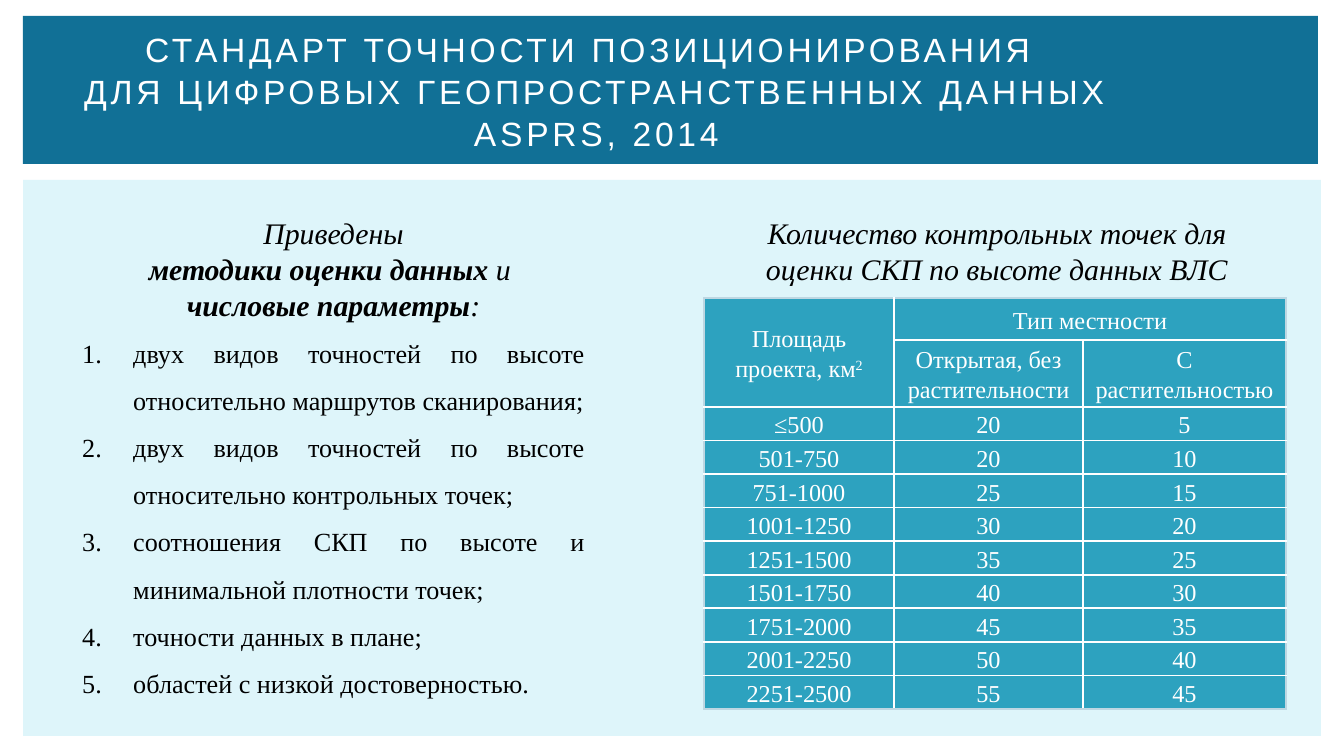
"""Build the slide on the ASPRS positional accuracy standard."""
import pptx
import pptx.dml.color
import pptx.enum.shapes
import pptx.enum.text
import pptx.oxml
import pptx.oxml.ns
import pptx.util

PX = 914400 / 134.4
ALIGN = pptx.enum.text.PP_ALIGN
ANCHOR = pptx.enum.text.MSO_ANCHOR
SERIF = "Times New Roman"
WHITE, BLACK, EDGE, CELL = "FFFFFF", "000000", "BED7E2", "2DA2BF"

PANELS = [((23, 180, 1298, 556), "DEF5FA"), ((23, 16, 1295, 148), "117096")]
TITLE = [
    "СТАНДАРТ ТОЧНОСТИ ПОЗИЦИОНИРОВАНИЯ ",
    "ДЛЯ ЦИФРОВЫХ ГЕОПРОСТРАНСТВЕННЫХ ДАННЫХ ASPRS, 2014",
]
TABLE_CAPTION = "Количество контрольных точек для оценки СКП по высоте данных ВЛС"
INTRO = [
    [("Приведены", False)],
    [("методики оценки данных ", True), ("и ", False)],
    [("числовые параметры", True), (":", False)],
]
METHODS = [
    "двух видов точностей по высоте относительно маршрутов сканирования;",
    "двух видов точностей по высоте относительно контрольных точек;",
    "соотношения СКП по высоте и минимальной плотности точек;",
    "точности данных в плане;",
    "областей с низкой достоверностью.",
]
POINT_COUNTS = [
    ("Площадь проекта, км", "Тип местности", ""),
    ("", "Открытая, без растительности", "С растительностью"),
    ("≤500", "20", "5"),
    ("501-750", "20", "10"),
    ("751-1000", "25", "15"),
    ("1001-1250", "30", "20"),
    ("1251-1500", "35", "25"),
    ("1501-1750", "40", "30"),
    ("1751-2000", "45", "35"),
    ("2001-2250", "50", "40"),
    ("2251-2500", "55", "45"),
]
COLUMN_WIDTHS = [190, 189, 203]
ROW_HEIGHTS = [42, 31] + [32] * (len(POINT_COUNTS) - 2)


def px(length):
    return pptx.util.Emu(round(length * PX))


def color(value):
    return pptx.dml.color.RGBColor.from_string(value)


def add_run(paragraph, text, size, ink=BLACK, face=SERIF, bold=False, italic=False):
    run = paragraph.add_run()
    run.text = text
    run.font.size = pptx.util.Pt(size)
    run.font.name = face
    run.font.bold = bold
    run.font.italic = italic
    run.font.color.rgb = color(ink)
    return run


def add_text_frame(slide, box):
    frame = slide.shapes.add_textbox(*map(px, box)).text_frame
    frame.word_wrap = True
    return frame


def next_paragraph(frame, align):
    first = frame.paragraphs[0]
    paragraph = frame.add_paragraph() if first.runs else first
    paragraph.alignment = align
    return paragraph


def set_number(paragraph):
    properties = paragraph._p.get_or_add_pPr()
    properties.set("marL", str(px(51)))
    properties.set("indent", str(px(-51)))
    properties.append(pptx.oxml.parse_xml(
        f'<a:buFont {pptx.oxml.ns.nsdecls("a")} typeface="+mj-lt"/>'))
    properties.append(pptx.oxml.parse_xml(
        f'<a:buAutoNum {pptx.oxml.ns.nsdecls("a")} type="arabicPeriod"/>'))


def set_borders(cell, outer_sides):
    properties = cell._tc.get_or_add_tcPr()
    for side in "LRTB":
        ink, width = (EDGE, 10000) if side in outer_sides else (WHITE, 12700)
        properties.append(pptx.oxml.parse_xml(
            f'<a:ln{side} {pptx.oxml.ns.nsdecls("a")} w="{width}"><a:solidFill>'
            f'<a:srgbClr val="{ink}"/></a:solidFill></a:ln{side}>'))


def add_panels(slide):
    for box, fill in PANELS:
        panel = slide.shapes.add_shape(
            pptx.enum.shapes.MSO_SHAPE.RECTANGLE, *map(px, box))
        panel.shadow.inherit = False
        panel.fill.solid()
        panel.fill.fore_color.rgb = color(fill)
        panel.line.fill.background()


def add_title(slide):
    frame = add_text_frame(slide, (20, 32, 1153, 116))
    frame.vertical_anchor = ANCHOR.MIDDLE
    paragraph = next_paragraph(frame, ALIGN.CENTER)
    paragraph.line_spacing = 1.05
    for index, line in enumerate(TITLE):
        if index:
            paragraph.add_line_break()
        run = add_run(paragraph, line, 18, WHITE, "Arial")
        run._r.get_or_add_rPr().set("spc", "200")


def add_point_table(slide):
    rows, columns = len(POINT_COUNTS), len(COLUMN_WIDTHS)
    table = slide.shapes.add_table(
        rows, columns, px(704), px(298),
        px(sum(COLUMN_WIDTHS)), px(sum(ROW_HEIGHTS))).table
    for column, width in zip(table.columns, COLUMN_WIDTHS):
        column.width = px(width)
    for row, height in zip(table.rows, ROW_HEIGHTS):
        row.height = px(height)
    table.cell(0, 0).merge(table.cell(1, 0))
    table.cell(0, 1).merge(table.cell(0, 2))
    for r, values in enumerate(POINT_COUNTS):
        for c, value in enumerate(values):
            cell = table.cell(r, c)
            edges = {"L": c == 0, "R": c == columns - 1 or (r, c) == (0, 1),
                     "T": r == 0, "B": r == rows - 1}
            set_borders(cell, [side for side in edges if edges[side]])
            cell.fill.solid()
            cell.fill.fore_color.rgb = color(CELL)
            cell.vertical_anchor = ANCHOR.MIDDLE
            cell.margin_left = cell.margin_right = px(9)
            cell.margin_top = cell.margin_bottom = 0
            if value:
                paragraph = next_paragraph(cell.text_frame, ALIGN.CENTER)
                paragraph.line_spacing = 1.15
                paragraph.space_after = pptx.util.Pt(10)
                add_run(paragraph, value, 13, WHITE)
    area = table.cell(0, 0).text_frame.paragraphs[0]
    add_run(area, "2", 13, WHITE)._r.get_or_add_rPr().set("baseline", "30000")


def add_caption(slide):
    frame = add_text_frame(slide, (708, 208, 578, 89))
    add_run(next_paragraph(frame, ALIGN.CENTER), TABLE_CAPTION, 16, italic=True)


def add_methods(slide):
    frame = add_text_frame(slide, (69, 208, 529, 503))
    for line in INTRO:
        paragraph = next_paragraph(frame, ALIGN.CENTER)
        for text, bold in line:
            add_run(paragraph, text, 16, bold=bold, italic=True)
    for method in METHODS:
        paragraph = next_paragraph(frame, ALIGN.JUSTIFY)
        paragraph.line_spacing = 1.5
        set_number(paragraph)
        add_run(paragraph, method, 14)


def main():
    deck = pptx.Presentation()
    deck.slide_width, deck.slide_height = px(1344), px(756)
    slide = deck.slides.add_slide(deck.slide_layouts[6])
    add_panels(slide)
    add_title(slide)
    add_point_table(slide)
    add_caption(slide)
    add_methods(slide)
    deck.save("out.pptx")


if __name__ == "__main__":
    main()
